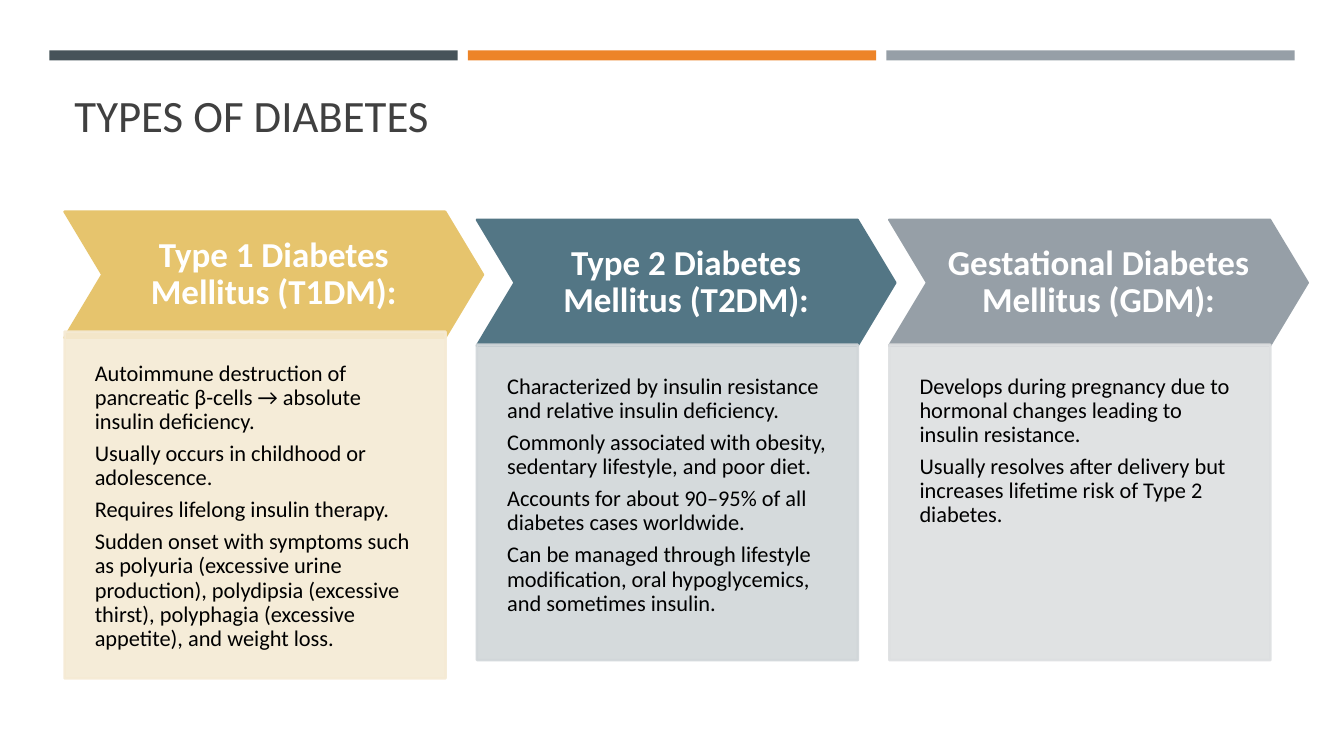
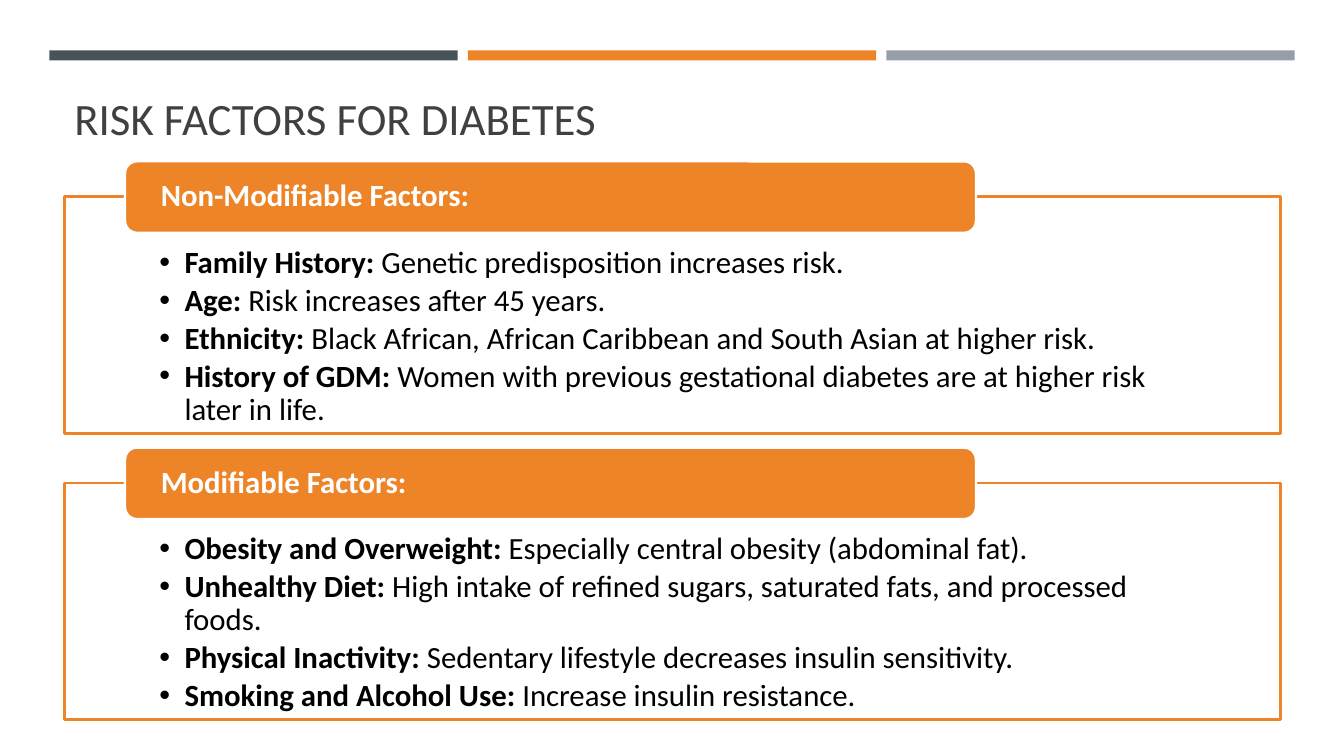
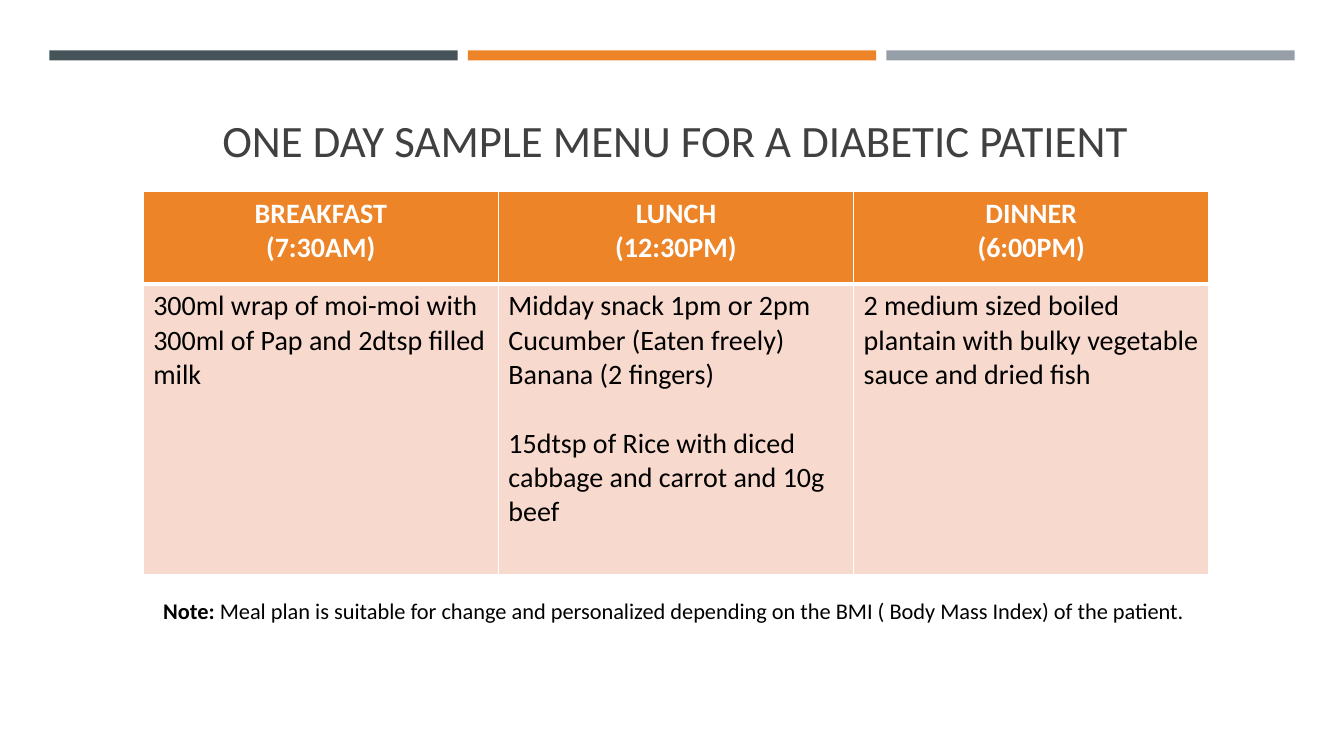
import dataclasses

import lxml.etree
import pptx
import pptx.dml.color
import pptx.enum.shapes
import pptx.enum.text
import pptx.oxml.ns
import pptx.util

Inches = pptx.util.Inches
Pt = pptx.util.Pt
Shape = pptx.enum.shapes.MSO_SHAPE
Align = pptx.enum.text.PP_ALIGN
Anchor = pptx.enum.text.MSO_ANCHOR
qn = pptx.oxml.ns.qn


@dataclasses.dataclass(frozen=True)
class Theme:
    font: str = "Calibri"
    title: str = "404040"
    text: str = "000000"
    white: str = "FFFFFF"
    slate: str = "465359"
    orange: str = "ED8428"
    gray: str = "969FA7"
    gold: str = "E6C46D"
    teal: str = "537685"
    gold_tint: str = "F5EAD4"
    teal_tint: str = "D1D6D9"
    gray_tint: str = "DDDFE1"
    cell_tint: str = "F8D9CD"
    title_size: float = 32
    heading_size: float = 25
    list_size: float = 22
    table_size: float = 20
    body_size: float = 16
    line_width: float = 1.75


def rgb(color):
    return pptx.dml.color.RGBColor.from_string(color)


def set_alpha(fill_parent, percent):
    """Make every solid colour below the element partly transparent."""
    for color in fill_parent.iter(qn("a:srgbClr")):
        lxml.etree.SubElement(color, qn("a:alpha"), val=str(percent * 1000))


def set_borders(cell, color, top=1, bottom=1):
    properties = cell._tc.get_or_add_tcPr()
    widths = {"a:lnL": 1, "a:lnR": 1, "a:lnT": top, "a:lnB": bottom}
    for position, (tag, width) in enumerate(widths.items()):
        line = lxml.etree.Element(qn(tag), w=str(Pt(width)))
        fill = lxml.etree.SubElement(line, qn("a:solidFill"))
        lxml.etree.SubElement(fill, qn("a:srgbClr"), val=color)
        properties.insert(position, line)


def add_bullet(paragraph, indent):
    properties = paragraph._p.get_or_add_pPr()
    properties.set("marL", str(indent))
    properties.set("indent", str(-indent))
    lxml.etree.SubElement(properties, qn("a:buFont"), typeface="Arial")
    lxml.etree.SubElement(properties, qn("a:buChar"), char="•")


class Deck:
    def __init__(self, theme):
        self.theme = theme
        self.presentation = pptx.Presentation()
        self.presentation.slide_width = Inches(13.33)
        self.presentation.slide_height = Inches(7.5)
        self.slide = None

    def set_text(self, frame, text, size, color=None, bold=False, align=Align.LEFT,
                 anchor=Anchor.TOP, margins=None, line_spacing=None,
                 space_after=0, last_space_before=0, bullets=False):
        """Fill a frame; text is a list of strings or (bold lead, rest) pairs."""
        frame.word_wrap = True
        frame.vertical_anchor = anchor
        if margins:
            (frame.margin_left, frame.margin_top, frame.margin_right,
             frame.margin_bottom) = map(Inches, margins)
        for index, content in enumerate(text):
            paragraph = frame.add_paragraph() if index else frame.paragraphs[0]
            if bullets:
                add_bullet(paragraph, Inches(0.25))
            paragraph.alignment = align
            paragraph.space_after = Pt(space_after)
            if line_spacing:
                paragraph.line_spacing = line_spacing
            if isinstance(content, str):
                runs = [(content, bold)]
            else:
                runs = [(content[0], True), (content[1], False)]
            for words, is_bold in runs:
                run = paragraph.add_run()
                run.text = words
                run.font.name = self.theme.font
                run.font.size = Pt(size)
                run.font.bold = is_bold
                run.font.color.rgb = rgb(color or self.theme.text)
        if last_space_before:
            frame.paragraphs[-1].space_before = Pt(last_space_before)

    def add_shape(self, kind, box, fill, line=None, alpha=None):
        shape = self.slide.shapes.add_shape(kind, *map(Inches, box))
        shape.shadow.inherit = False
        shape.fill.solid()
        shape.fill.fore_color.rgb = rgb(fill)
        if line:
            shape.line.color.rgb = rgb(line)
            shape.line.width = Pt(self.theme.line_width)
        else:
            shape.line.fill.background()
        if alpha:
            set_alpha(shape._element.spPr, alpha)
        return shape

    def add_text(self, box, text, **text_format):
        shape = self.slide.shapes.add_textbox(*map(Inches, box))
        self.set_text(shape.text_frame, text, **text_format)

    def add_slide(self, title, title_box, align=Align.LEFT):
        theme = self.theme
        self.slide = self.presentation.slides.add_slide(
            self.presentation.slide_layouts[6])
        for index, color in enumerate((theme.slate, theme.orange, theme.gray)):
            self.add_shape(Shape.RECTANGLE, (0.49 + 4.15 * index, 0.5, 4.05, 0.1), color)
        self.add_text(title_box, [title], size=theme.title_size,
                      color=theme.title, align=align, anchor=Anchor.BOTTOM)

    def add_type_column(self, left, top, card_top, card_height, color, tint,
                        heading, facts):
        """Chevron heading above a tinted card of facts."""
        theme = self.theme
        chevron = self.add_shape(Shape.CHEVRON, (left, top, 4.15, 1.25), color, color)
        chevron.adjustments[0] = 0.3
        self.set_text(chevron.text_frame, [heading], size=theme.heading_size,
                      color=theme.white, bold=True, align=Align.CENTER,
                      anchor=Anchor.MIDDLE, margins=(0.15,) * 4, line_spacing=0.9)
        card = self.add_shape(Shape.RECTANGLE, (left, card_top, 3.78, card_height),
                              tint, tint, alpha=90)
        self.set_text(card.text_frame, facts, size=theme.body_size,
                      margins=(0.3, 0.3, 0.3, 0.6), line_spacing=0.9, space_after=5.6)

    def add_factor_panel(self, top, heading, factors):
        """Outlined list with a rounded label over its top edge."""
        theme = self.theme
        panel = self.add_shape(Shape.RECTANGLE, (0.64, top, 12.06, 2.35),
                               theme.white, theme.orange)
        self.set_text(panel.text_frame, factors, size=theme.list_size, bullets=True,
                      margins=(0.94, 0.5, 0.94, 0.17), line_spacing=0.9, space_after=3.3)
        label = self.add_shape(Shape.ROUNDED_RECTANGLE, (1.24, top - 0.35, 8.44, 0.71),
                               theme.orange, theme.white)
        self.set_text(label.text_frame, [heading], size=theme.list_size,
                      color=theme.white, bold=True, anchor=Anchor.MIDDLE,
                      margins=(0.32, 0, 0.32, 0), line_spacing=0.9)

    def add_menu_table(self, box, row_heights, meals):
        """One column per meal: (heading lines, dish lines, gap before last dish)."""
        theme = self.theme
        table = self.slide.shapes.add_table(2, len(meals), *map(Inches, box)).table
        table.horz_banding = False
        for row, height in zip(table.rows, row_heights):
            row.height = Inches(height)
        for column, (heading, dishes, gap) in enumerate(meals):
            header, body = table.cell(0, column), table.cell(1, column)
            for cell, fill in ((header, theme.orange), (body, theme.cell_tint)):
                cell.fill.solid()
                cell.fill.fore_color.rgb = rgb(fill)
            set_borders(header, theme.white, bottom=3)
            set_borders(body, theme.white, top=3)
            self.set_text(header.text_frame, heading, size=theme.table_size,
                          color=theme.white, bold=True, align=Align.CENTER)
            self.set_text(body.text_frame, dishes, size=theme.table_size,
                          last_space_before=gap)


def add_types_slide(deck):
    theme = deck.theme
    deck.add_slide("TYPES OF DIABETES", (0.64, 0.77, 12.06, 0.68))
    columns = [
        (2.1, 3.29, 3.44, theme.gold, theme.gold_tint,
         "Type 1 Diabetes Mellitus (T1DM):",
         ["Autoimmune destruction of pancreatic β-cells → absolute insulin deficiency.",
          "Usually occurs in childhood or adolescence.",
          "Requires lifelong insulin therapy.",
          "Sudden onset with symptoms such as polyuria (excessive urine production), "
          "polydipsia (excessive thirst), polyphagia (excessive appetite), and weight loss."]),
        (2.18, 3.42, 3.13, theme.teal, theme.teal_tint,
         "Type 2 Diabetes Mellitus (T2DM):",
         ["Characterized by insulin resistance and relative insulin deficiency.",
          "Commonly associated with obesity, sedentary lifestyle, and poor diet.",
          "Accounts for about 90–95% of all diabetes cases worldwide.",
          "Can be managed through lifestyle modification, oral hypoglycemics, "
          "and sometimes insulin."]),
        (2.18, 3.42, 3.13, theme.gray, theme.gray_tint,
         "Gestational Diabetes Mellitus (GDM):",
         ["Develops during pregnancy due to hormonal changes leading to insulin resistance.",
          "Usually resolves after delivery but increases lifetime risk of Type 2 diabetes."]),
    ]
    for index, column in enumerate(columns):
        deck.add_type_column(0.64 + 4.09 * index, *column)


def add_risk_slide(deck):
    deck.add_slide("RISK FACTORS FOR DIABETES", (0.64, 0.77, 12.06, 0.71))
    deck.add_factor_panel(1.95, "Non-Modifiable Factors:", [
        ("Family History:", " Genetic predisposition increases risk."),
        ("Age:", " Risk increases after 45 years."),
        ("Ethnicity:", " Black African, African Caribbean and South Asian at higher risk."),
        ("History of GDM:",
         " Women with previous gestational diabetes are at higher risk later in life."),
    ])
    deck.add_factor_panel(4.79, "Modifiable Factors:", [
        ("Obesity and Overweight:", " Especially central obesity (abdominal fat)."),
        ("Unhealthy Diet:",
         " High intake of refined sugars, saturated fats, and processed foods."),
        ("Physical Inactivity:", " Sedentary lifestyle decreases insulin sensitivity."),
        ("Smoking and Alcohol Use:", " Increase insulin resistance."),
    ])


def add_menu_slide(deck):
    deck.add_slide("ONE DAY SAMPLE MENU FOR A DIABETIC PATIENT",
                   (1.32, 0.77, 10.76, 0.93), Align.CENTER)
    deck.add_menu_table((1.42, 1.9, 10.57, 3.8), (0.92, 2.88), [
        (["BREAKFAST", "(7:30AM)"],
         ["300ml wrap of moi-moi with 300ml of Pap and 2dtsp filled milk"], 0),
        (["LUNCH", "(12:30PM)"],
         ["Midday snack 1pm or 2pm", "Cucumber (Eaten freely)", "Banana (2 fingers)",
          "15dtsp of Rice with diced cabbage and carrot and 10g beef"], 24.4),
        (["DINNER", "(6:00PM)"],
         ["2 medium sized boiled plantain with bulky vegetable sauce and dried fish"], 0),
    ])
    deck.add_text((1.52, 5.88, 10.47, 0.37), [
        ("Note: ", "Meal plan is suitable for change and personalized depending on "
                   "the BMI ( Body Mass Index) of the patient."),
    ], size=deck.theme.body_size)


def main():
    deck = Deck(Theme())
    add_types_slide(deck)
    add_risk_slide(deck)
    add_menu_slide(deck)
    deck.presentation.save("out.pptx")


if __name__ == "__main__":
    main()
